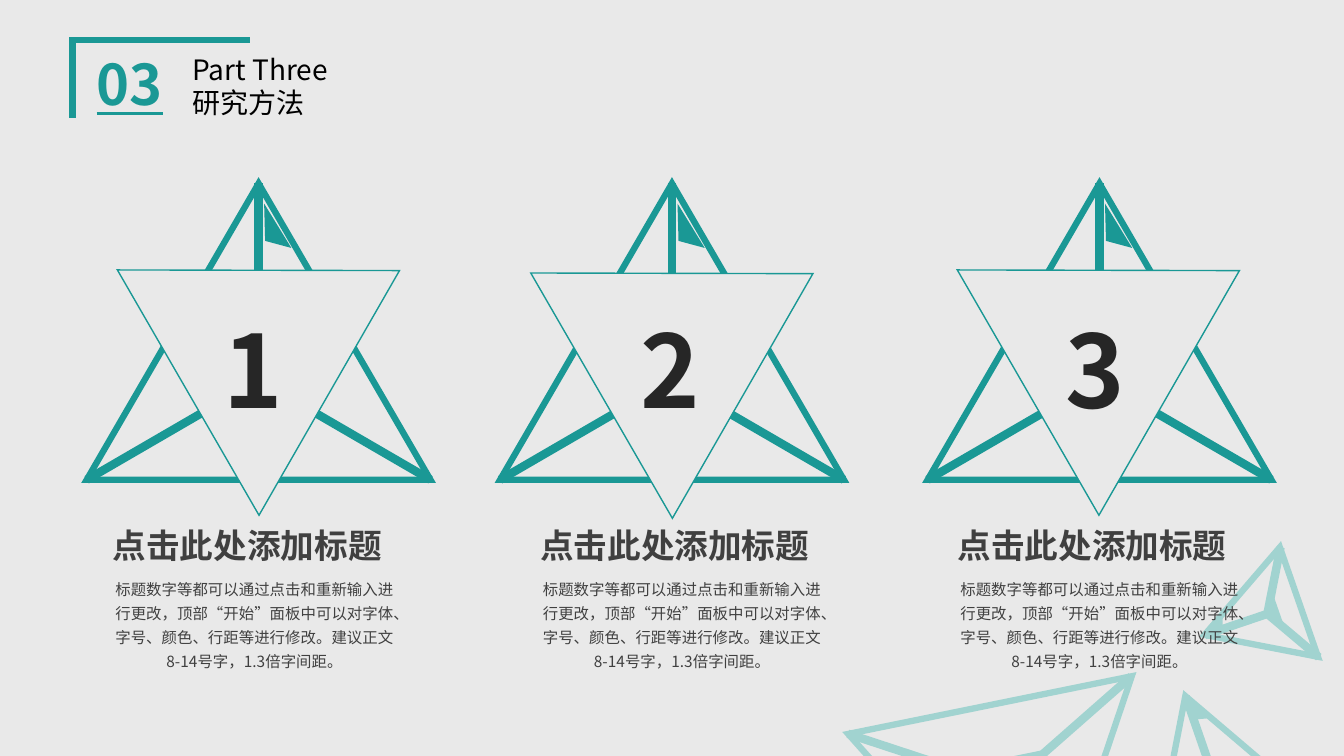
from dataclasses import dataclass

from lxml import etree
from pptx import Presentation
from pptx import util as u
from pptx.dml.color import RGBColor
from pptx.enum import lang, shapes, text
from pptx.oxml import ns

TEAL = RGBColor(0x1A, 0x98, 0x95)
PALE_TEAL = RGBColor(0xA1, 0xD3, 0xD0)
PAPER = RGBColor(0xE9, 0xE9, 0xE9)
BLACK = RGBColor(0, 0, 0)
INK = RGBColor(0x26, 0x26, 0x26)
GREY = RGBColor(0x40, 0x40, 0x40)
FONT = "Noto Sans CJK SC"
TITLE = "点击此处添加标题"
BODY = (
    "标题数字等都可以通过点击和重新输入进行更改，顶部“开始”面板中可以对字体、"
    "字号、颜色、行距等进行修改。建议正文8-14号字，1.3倍字间距。"
)

Point = tuple[float, float]
Box = tuple[float, float, float, float]


@dataclass
class Style:
    size: float
    color: RGBColor
    bold: bool = False
    underline: bool = False
    centred: bool = False
    spacing: float | None = None
    wrap: bool = True


@dataclass
class Pyramid:
    """A triangle outline with spokes and a small filled facet."""
    box: Box
    turn: float
    spokes: list[tuple[Point, Point]]
    facet: list[Point]
    core: Box | None = None


@dataclass
class Column:
    number: str
    star: float
    inner: Point
    number_left: float
    title_left: float


def set_line(shape, color: RGBColor, width: float) -> None:
    shape.line.color.rgb = color
    shape.line.width = u.Pt(width)
    etree.SubElement(shape.line._get_or_add_ln(), ns.qn("a:miter"), lim="800000")


def add_triangle(page, box: Box, turn: float, fill: RGBColor,
                 color: RGBColor, width: float) -> None:
    triangle = page.shapes.add_shape(
        shapes.MSO_SHAPE.ISOSCELES_TRIANGLE, *map(u.Inches, box))
    triangle.rotation = turn
    triangle.shadow.inherit = False
    triangle.fill.solid()
    triangle.fill.fore_color.rgb = fill
    set_line(triangle, color, width)


def add_spoke(page, start: Point, end: Point, color: RGBColor) -> None:
    spoke = page.shapes.add_connector(
        shapes.MSO_CONNECTOR.STRAIGHT, *map(u.Inches, start + end))
    set_line(spoke, color, 6)
    etree.SubElement(spoke._element.spPr, ns.qn("a:effectLst"))


def add_outline(page, points: list[Point], fill: RGBColor | None,
                color: RGBColor | None, width: float = 1) -> None:
    corners = [(u.Inches(x), u.Inches(y)) for x, y in points]
    builder = page.shapes.build_freeform(*corners[0])
    builder.add_line_segments(corners[1:], close=fill is not None)
    outline = builder.convert_to_shape()
    outline.shadow.inherit = False
    if fill is None:
        outline.fill.background()
    else:
        outline.fill.solid()
        outline.fill.fore_color.rgb = fill
    if color is None:
        outline.line.fill.background()
    else:
        set_line(outline, color, width)


def add_text(page, place: Box, lines: list[str], style: Style) -> None:
    box = page.shapes.add_textbox(*map(u.Inches, place))
    frame = box.text_frame
    frame.word_wrap = style.wrap
    frame.auto_size = text.MSO_AUTO_SIZE.SHAPE_TO_FIT_TEXT
    for index, line in enumerate(lines):
        para = frame.add_paragraph() if index else frame.paragraphs[0]
        para.alignment = text.PP_ALIGN.CENTER if style.centred else text.PP_ALIGN.LEFT
        if style.spacing:
            para.line_spacing = style.spacing
        span = para.add_run()
        span.text = line
        span.font.size = u.Pt(style.size)
        span.font.bold = style.bold
        span.font.underline = style.underline
        span.font.color.rgb = style.color
        span.font.language_id = lang.MSO_LANGUAGE_ID.SIMPLIFIED_CHINESE
        span.font.name = FONT
        etree.SubElement(span.font._element, ns.qn("a:ea"), typeface=FONT)


def add_pyramid(page, pyramid: Pyramid) -> None:
    add_triangle(page, pyramid.box, pyramid.turn, PAPER, PALE_TEAL, 4.5)
    for start, end in pyramid.spokes:
        add_spoke(page, start, end, PALE_TEAL)
    if pyramid.core:
        add_triangle(page, pyramid.core, pyramid.turn, PALE_TEAL, PALE_TEAL, 1)
    if pyramid.facet:
        add_outline(page, pyramid.facet, PALE_TEAL, PALE_TEAL)


def add_star(page, left: float) -> None:
    top, width, height = 1.82, 3.41, 2.94
    middle, bottom = left + width / 2, top + height
    add_triangle(page, (left, top, width, height), 0, PAPER, TEAL, 4.5)
    for tip in [(middle, top), (left, bottom), (left + width, bottom)]:
        add_spoke(page, tip, (middle, 3.77), TEAL)
    flag = [(left + 1.77, 2.39), (left + 2.03, 2.46), (left + 1.76, 2.02)]
    add_outline(page, flag, TEAL, None)


PYRAMIDS = [
    Pyramid((11.23, 6.87, 1.47, 1.26), 340.7, [((11.76, 6.91), (12.03, 7.69))],
            [(11.86, 7.13), (11.98, 7.12), (11.81, 6.98)]),
    Pyramid((8.63, 6.97, 2.87, 2.47), 168.5,
            [((11.22, 6.71), (9.98, 7.8)), ((8.41, 7.28), (9.99, 7.8))],
            [], (9.58, 7.53, 0.75, 0.23)),
    Pyramid((11.84, 5.64, 1.15, 0.99), 250.8,
            [(tip, (12.57, 6.09)) for tip in [(11.95, 6.3), (13.08, 6.52), (12.7, 5.43)]],
            [(12.12, 6.22), (12.12, 6.13), (12.01, 6.26)], (12.48, 6.02, 0.3, 0.09)),
]
COLUMNS = [
    Column("1", 0.86, (1.51, 2.08), 2.12, 1.02),
    Column("2", 4.96, (5.61, 2.11), 6.25, 5.26),
    Column("3", 9.2, (9.84, 2.08), 10.47, 9.4),
]


def main() -> None:
    deck = Presentation()
    deck.slide_width, deck.slide_height = u.Inches(13.33), u.Inches(7.5)
    page = deck.slides.add_slide(deck.slide_layouts[6])
    page.background.fill.solid()
    page.background.fill.fore_color.rgb = PAPER

    # Corner bracket and pale pyramids
    add_outline(page, [(0.72, 1.17), (0.72, 0.4), (2.48, 0.4)], None, TEAL, 4.5)
    for pyramid in PYRAMIDS:
        add_pyramid(page, pyramid)

    # Section heading
    add_text(page, (0.86, 0.44, 0.95, 0.77), ["03"],
             Style(40, TEAL, bold=True, underline=True))
    add_text(page, (1.81, 0.47, 2.4, 0.77), ["Part Three", "研究方法"], Style(20, BLACK))

    # Three numbered stars with captions
    for column in COLUMNS:
        add_star(page, column.star)
        add_triangle(page, (*column.inner, 2.81, 2.42), 60, PAPER, TEAL, 1)
        add_text(page, (column.number_left, 3, 0.82, 1.31), [column.number],
                 Style(72, INK, bold=True, wrap=False))
        add_text(page, (column.title_left, 5.16, 2.89, 0.5), [TITLE],
                 Style(24, GREY, bold=True, wrap=False))
        add_text(page, (column.title_left - 0.01, 5.65, 3.03, 1.06), [BODY],
                 Style(11, GREY, centred=True, spacing=1.3))

    deck.save("out.pptx")


if __name__ == "__main__":
    main()
